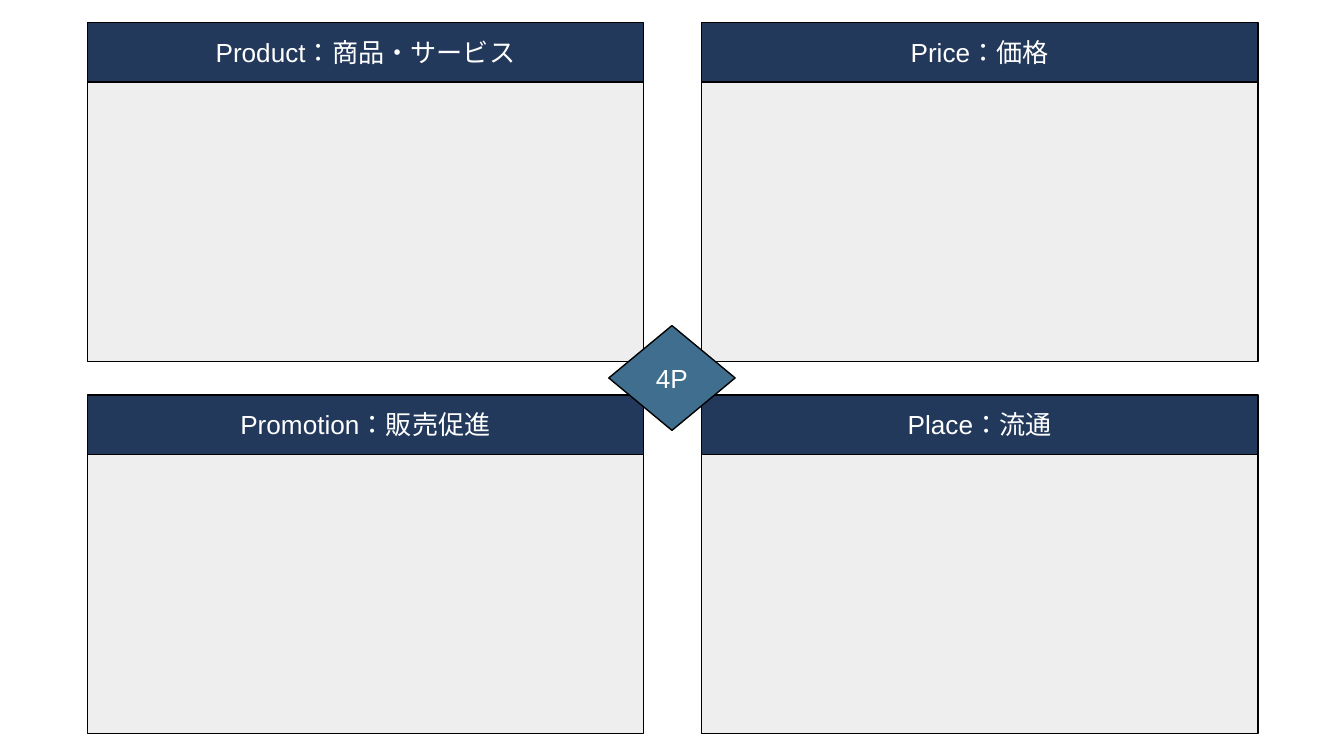
from lxml import etree
from pptx import Presentation
from pptx import util as u
from pptx.dml.color import RGBColor
from pptx.enum import lang, shapes, text
from pptx.oxml import ns

# Content: rows of the 4P grid
GRID = [
    ["Product：商品・サービス", "Price：価格"],
    ["Promotion：販売促進", "Place：流通"],
]
HUB = "4P"

THEME = dict(head="23395B", body="EEEEEE", hub="406E8E", line="000000",
             ink="FFFFFF", face="Arial", size=14, rule=0.75)

# Layout in inches, on a 16:9 slide
WIDE = 10
HIGH = WIDE * 9 / 16
LEFT, TOP = 0.65, 0.17
COL, ROW = 4.57, 2.77      # pitch of columns and rows
CARD, HEAD, BODY = 4.14, 0.44, 2.08
HUB_W, HUB_H = 0.94, 0.78
PAD = 0.1

KIND = shapes.MSO_SHAPE
ANCHOR = text.MSO_ANCHOR


def draw(slide, kind, box, fill, label="", anchor=ANCHOR.TOP):
    shape = slide.shapes.add_shape(kind, *(u.Inches(n) for n in box))
    shape.shadow.inherit = False
    shape.fill.solid()
    shape.fill.fore_color.rgb = RGBColor.from_string(THEME[fill])
    shape.line.color.rgb = RGBColor.from_string(THEME["line"])
    shape.line.width = u.Pt(THEME["rule"])
    if label:
        write(shape.text_frame, label, anchor)


def write(frame, label, anchor):
    pad = u.Inches(PAD)
    form = dict(margin_left=pad, margin_right=pad, margin_top=pad,
                margin_bottom=pad, word_wrap=True, vertical_anchor=anchor)
    for key, val in form.items():
        setattr(frame, key, val)
    para = frame.paragraphs[0]
    para.alignment = text.PP_ALIGN.CENTER
    run = para.add_run()
    run.text = label
    style = dict(name=THEME["face"], size=u.Pt(THEME["size"]),
                 language_id=lang.MSO_LANGUAGE_ID.JAPANESE)
    for key, val in style.items():
        setattr(run.font, key, val)
    run.font.color.rgb = RGBColor.from_string(THEME["ink"])
    # Same face for East Asian and complex scripts
    for tag in ("a:ea", "a:cs"):
        etree.SubElement(run.font._element, ns.qn(tag), typeface=THEME["face"])


def main():
    deck = Presentation()
    deck.slide_width, deck.slide_height = u.Inches(WIDE), u.Inches(HIGH)
    slide = deck.slides.add_slide(deck.slide_layouts[6])

    # Cards: a body with a header bar on top
    for r, row in enumerate(GRID):
        for c, label in enumerate(row):
            x, y = LEFT + c * COL, TOP + r * ROW
            draw(slide, KIND.RECTANGLE, (x, y + HEAD, CARD, BODY), "body")
            draw(slide, KIND.RECTANGLE, (x, y, CARD, HEAD), "head", label)

    # Hub at the centre of the slide
    box = ((WIDE - HUB_W) / 2, (HIGH - HUB_H) / 2, HUB_W, HUB_H)
    draw(slide, KIND.DIAMOND, box, "hub", HUB, ANCHOR.MIDDLE)

    deck.save("out.pptx")


if __name__ == "__main__":
    main()
